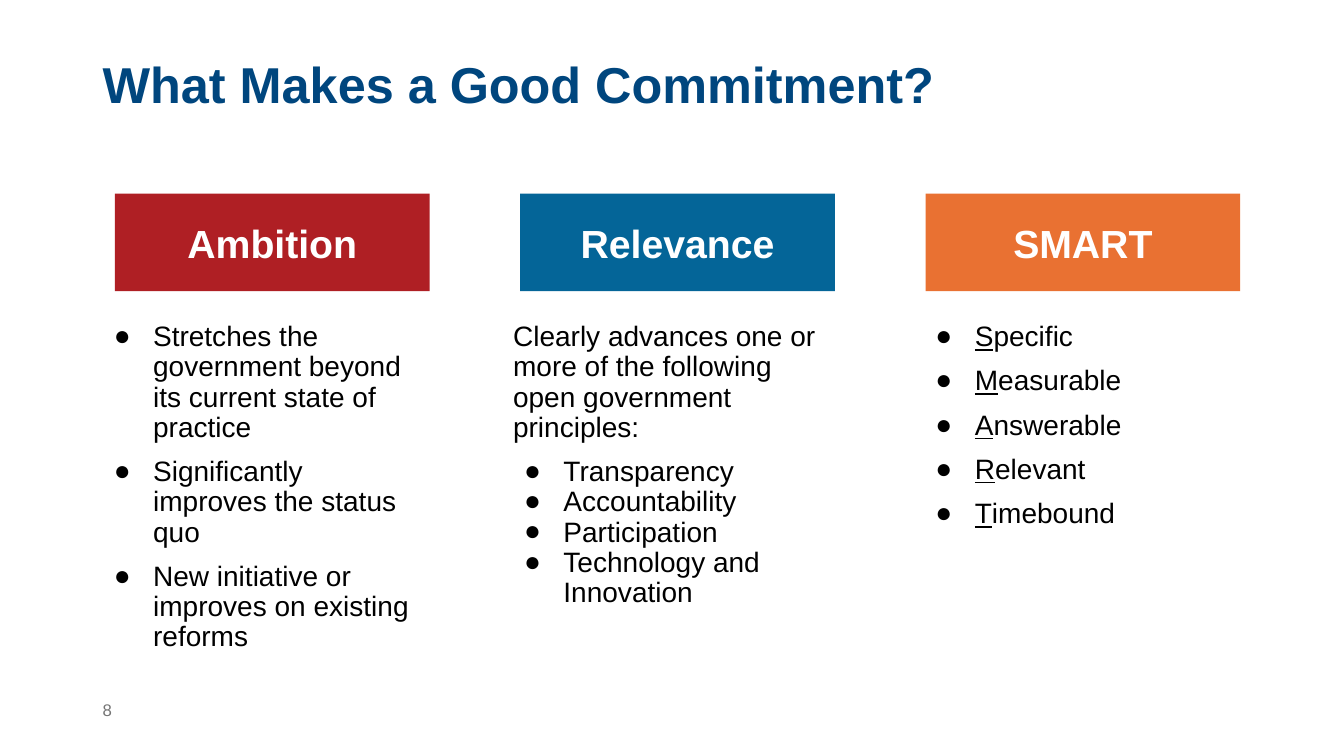
import lxml.etree
import pptx
import pptx.dml.color
import pptx.enum.shapes
import pptx.enum.text
import pptx.oxml.ns
import pptx.util
from pptx.util import Inches

COLORS = {
    "title": "00467E",
    "ambition": "AF1F24",
    "relevance": "046598",
    "smart": "E97132",
    "header_text": "FFFFFF",
    "body": "000000",
    "page_number": "757575",
}
MIDDLE = pptx.enum.text.MSO_ANCHOR.MIDDLE
TOP = pptx.enum.text.MSO_ANCHOR.TOP


def style_font(font, size, color, bold=False):
    font.name = "Arial"
    font.size = pptx.util.Pt(size)
    font.bold = bold
    font.color.rgb = pptx.dml.color.RGBColor.from_string(COLORS[color])


def add_text_box(left, top, width, height, anchor):
    box = slide.shapes.add_textbox(Inches(left), Inches(top), Inches(width), Inches(height))
    box.text_frame.word_wrap = True
    box.text_frame.vertical_anchor = anchor
    return box.text_frame


presentation = pptx.Presentation()
presentation.slide_width = Inches(13.33)
presentation.slide_height = Inches(7.5)
slide = presentation.slides.add_slide(presentation.slide_layouts[6])

# Title
title_frame = add_text_box(0.92, 0.34, 11.5, 1.05, MIDDLE)
title = title_frame.paragraphs[0]
title.text = "What Makes a Good Commitment?"
title.line_spacing = 0.9
style_font(title.runs[0].font, 36, "title", bold=True)

# Columns: heading, colour, body left, paragraphs as (text, bulleted, space before)
columns = [
    ("Ambition", "ambition", 0.92, [
        ("Stretches the government beyond its current state of practice", True, 0),
        ("Significantly improves the status quo", True, 10),
        ("New initiative or improves on existing reforms", True, 10),
    ]),
    ("Relevance", "relevance", 4.99, [
        ("Clearly advances one or more of the following open government principles:", False, 0),
        ("Transparency", True, 10),
        ("Accountability", True, 0),
        ("Participation", True, 0),
        ("Technology and Innovation", True, 0),
    ]),
    ("SMART", "smart", 9.07, [
        ("Specific", True, 0),
        ("Measurable", True, 10),
        ("Answerable", True, 10),
        ("Relevant", True, 10),
        ("Timebound", True, 10),
    ]),
]

for index, (heading, color, body_left, items) in enumerate(columns):
    # Coloured heading
    header = slide.shapes.add_shape(
        pptx.enum.shapes.MSO_SHAPE.RECTANGLE,
        Inches(1.14 + index * 4.02), Inches(1.92), Inches(3.12), Inches(0.97))
    header.shadow.inherit = False
    header.fill.solid()
    header.fill.fore_color.rgb = pptx.dml.color.RGBColor.from_string(COLORS[color])
    header.line.fill.background()
    header.text_frame.vertical_anchor = MIDDLE
    paragraph = header.text_frame.paragraphs[0]
    paragraph.text = heading
    paragraph.alignment = pptx.enum.text.PP_ALIGN.CENTER
    style_font(paragraph.runs[0].font, 28, "header_text", bold=True)

    # Body text
    body_frame = add_text_box(body_left, 3.15, 3.35, 3.52, TOP)
    for number, (text, bulleted, space_before) in enumerate(items):
        paragraph = body_frame.add_paragraph() if number else body_frame.paragraphs[0]
        if bulleted:
            properties = paragraph._p.get_or_add_pPr()
            properties.set("marL", str(Inches(0.5)))
            properties.set("indent", str(Inches(-0.39)))
            bullet_color = lxml.etree.SubElement(properties, pptx.oxml.ns.qn("a:buClr"))
            lxml.etree.SubElement(bullet_color, pptx.oxml.ns.qn("a:srgbClr"), val=COLORS["body"])
            lxml.etree.SubElement(properties, pptx.oxml.ns.qn("a:buFont"), typeface="Arial")
            lxml.etree.SubElement(properties, pptx.oxml.ns.qn("a:buChar"), char="●")
        paragraph.line_spacing = 0.9
        paragraph.space_before = pptx.util.Pt(space_before)

        # The SMART initials are underlined
        parts = [text[0], text[1:]] if heading == "SMART" else [text]
        for part in parts:
            run = paragraph.add_run()
            run.text = part
            style_font(run.font, 20, "body")
        if len(parts) == 2:
            paragraph.runs[0].font.underline = True

# Page number
number_frame = add_text_box(0.92, 6.84, 0.65, 0.4, MIDDLE)
number_frame.text = "8"
style_font(number_frame.paragraphs[0].runs[0].font, 12, "page_number")

presentation.save("out.pptx")
